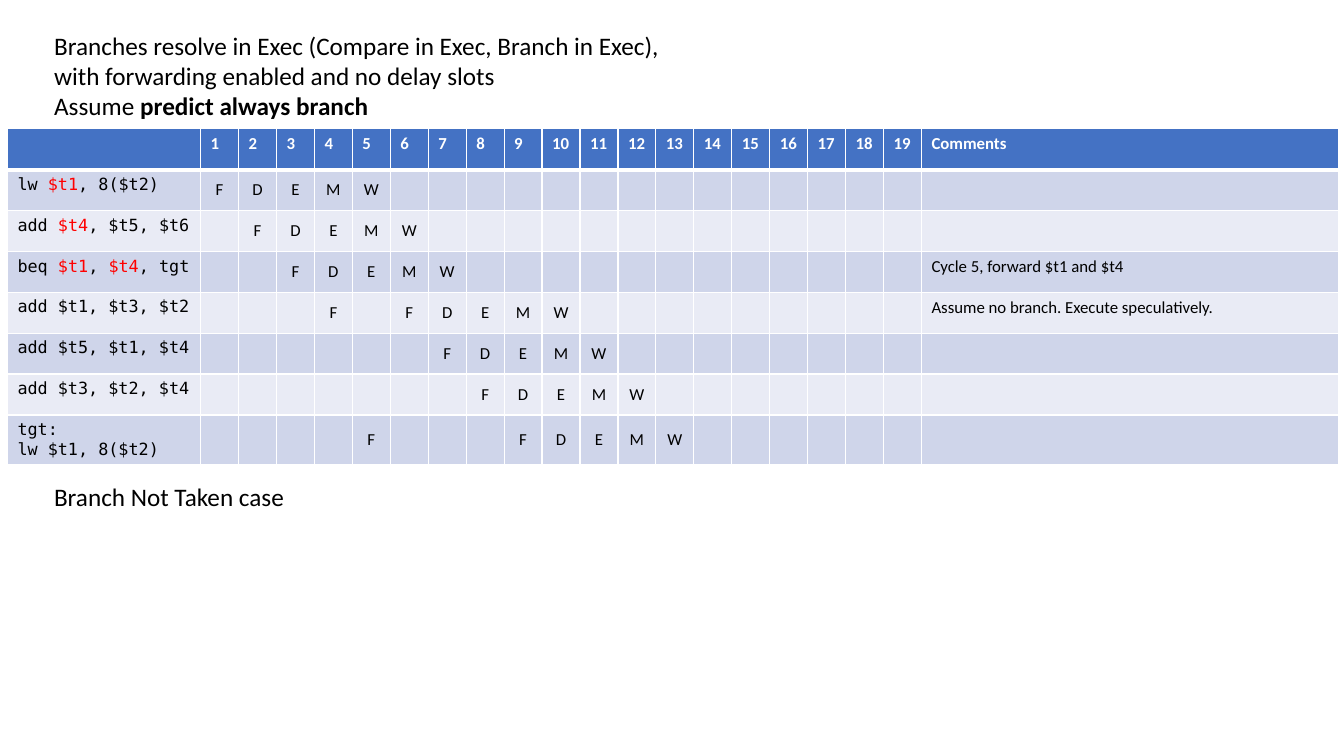
from lxml import etree
from pptx import Presentation
from pptx import util as u
from pptx.dml.color import RGBColor
from pptx.enum import text as t
from pptx.oxml import ns

Pt = u.Pt
HUES = {"head": "4472C4", "odd": "CFD5EA", "even": "E9EBF5",
        "white": "FFFFFF", "black": "000000", "red": "FF0000"}
SANS, MONO = "Calibri", "DejaVu Sans Mono"


def write(frame, words, size, font=SANS, hue="black", bold=False,
          mark=None, align=t.PP_ALIGN.LEFT):
    """Fill a frame; parts between asterisks turn to the mark hue, or bold."""
    frame.text = words
    for para in frame.paragraphs:
        para.alignment = align
        parts = para.text.split("*")
        para.clear()
        for n, part in enumerate(parts):
            if not part:
                continue
            run = para.add_run()
            run.text = part
            starred = n % 2 == 1
            run.font.size = Pt(size)
            run.font.name = font
            run.font.bold = bold or (starred and mark is None)
            tone = mark if starred and mark else hue
            run.font.color.rgb = RGBColor.from_string(HUES[tone])


def paint(cell, hue, top, base):
    """Give a cell white borders and a plain fill."""
    props = cell._tc.get_or_add_tcPr()
    for side, width in (("L", 1), ("R", 1), ("T", top), ("B", base)):
        line = etree.SubElement(props, ns.qn("a:ln" + side), w=str(Pt(width)))
        solid = etree.SubElement(line, ns.qn("a:solidFill"))
        etree.SubElement(solid, ns.qn("a:srgbClr"), val=HUES["white"])
    cell.fill.solid()
    cell.fill.fore_color.rgb = RGBColor.from_string(HUES[hue])


deck = Presentation()
deck.slide_width, deck.slide_height = Pt(960), Pt(540)
slide = deck.slides.add_slide(deck.slide_layouts[5])

# Title
title = slide.shapes.title
title.left, title.top, title.width, title.height = Pt(31.5), Pt(18), Pt(456), Pt(72.7)
frame = title.text_frame
frame.word_wrap = False
frame.auto_size = t.MSO_AUTO_SIZE.NONE
frame.vertical_anchor = t.MSO_ANCHOR.TOP
write(frame, "Branches resolve in Exec (Compare in Exec, Branch in Exec),\n"
      "with forwarding enabled and no delay slots\n"
      "Assume *predict always branch*", 18)

# Pipeline: code, cycles of lone fetches, first cycle of the full run, comment
STEPS = [
    ("lw *$t1*, 8($t2)", [], 1, ""),
    ("add *$t4*, $t5, $t6", [], 2, ""),
    ("beq *$t1*, *$t4*, tgt", [], 3, "Cycle 5, forward $t1 and $t4"),
    ("add $t1, $t3, $t2", [4], 6, "Assume no branch. Execute speculatively."),
    ("add $t5, $t1, $t4", [], 7, ""),
    ("add $t3, $t2, $t4", [], 8, ""),
    ("tgt:\nlw $t1, 8($t2)", [5], 9, ""),
]
CYCLES = 19
LAST = CYCLES + 1
ROW = 29.2
rows = len(STEPS) + 1

grid = slide.shapes.add_table(rows, LAST + 1, Pt(5.3), Pt(92),
                              Pt(951.3), Pt(ROW * rows)).table
for c, col in enumerate(grid.columns):
    col.width = Pt({0: 138, LAST: 298}.get(c, 27.12))
for r, row in enumerate(grid.rows):
    row.height = Pt(ROW)
    hue = "head" if r == 0 else "odd" if r % 2 else "even"
    for cell in row.cells:
        paint(cell, hue, 3 if r == 1 else 1, 3 if r == 0 else 1)

# Header row
for c in range(1, LAST + 1):
    label = "Comments" if c == LAST else str(c)
    write(grid.cell(0, c).text_frame, label, 12, hue="white", bold=True)

# Instruction rows
for r, (code, lone, start, note) in enumerate(STEPS, 1):
    write(grid.cell(r, 0).text_frame, code, 12, MONO, mark="red")
    stages = [(c, "F") for c in lone] + list(enumerate("FDEMW", start))
    for c, stage in stages:
        cell = grid.cell(r, c)
        cell.vertical_anchor = t.MSO_ANCHOR.MIDDLE
        write(cell.text_frame, stage, 12, align=t.PP_ALIGN.CENTER)
    if note:
        write(grid.cell(r, LAST).text_frame, note, 12)

# Case label
case = slide.shapes.add_textbox(Pt(31.5), Pt(340), Pt(181), Pt(29))
case.text_frame.word_wrap = False
write(case.text_frame, "Branch Not Taken case", 18)

deck.save("out.pptx")
